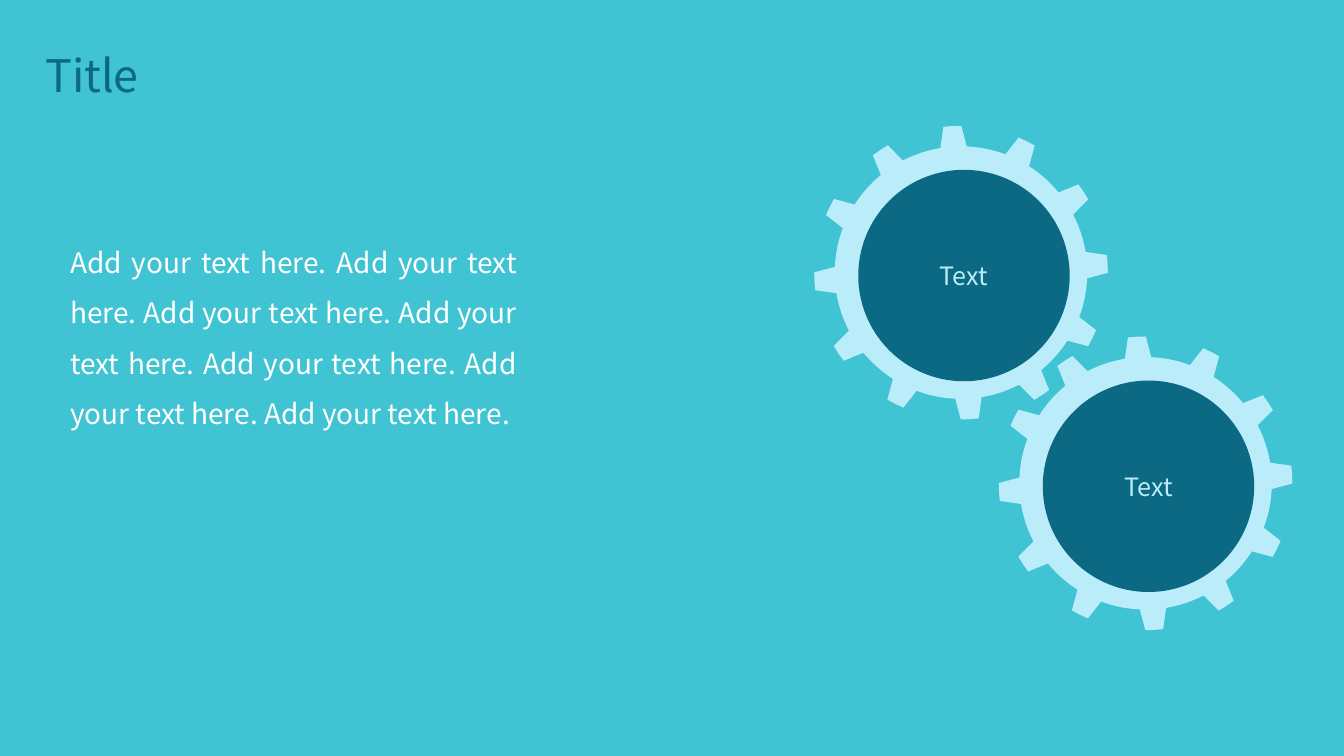
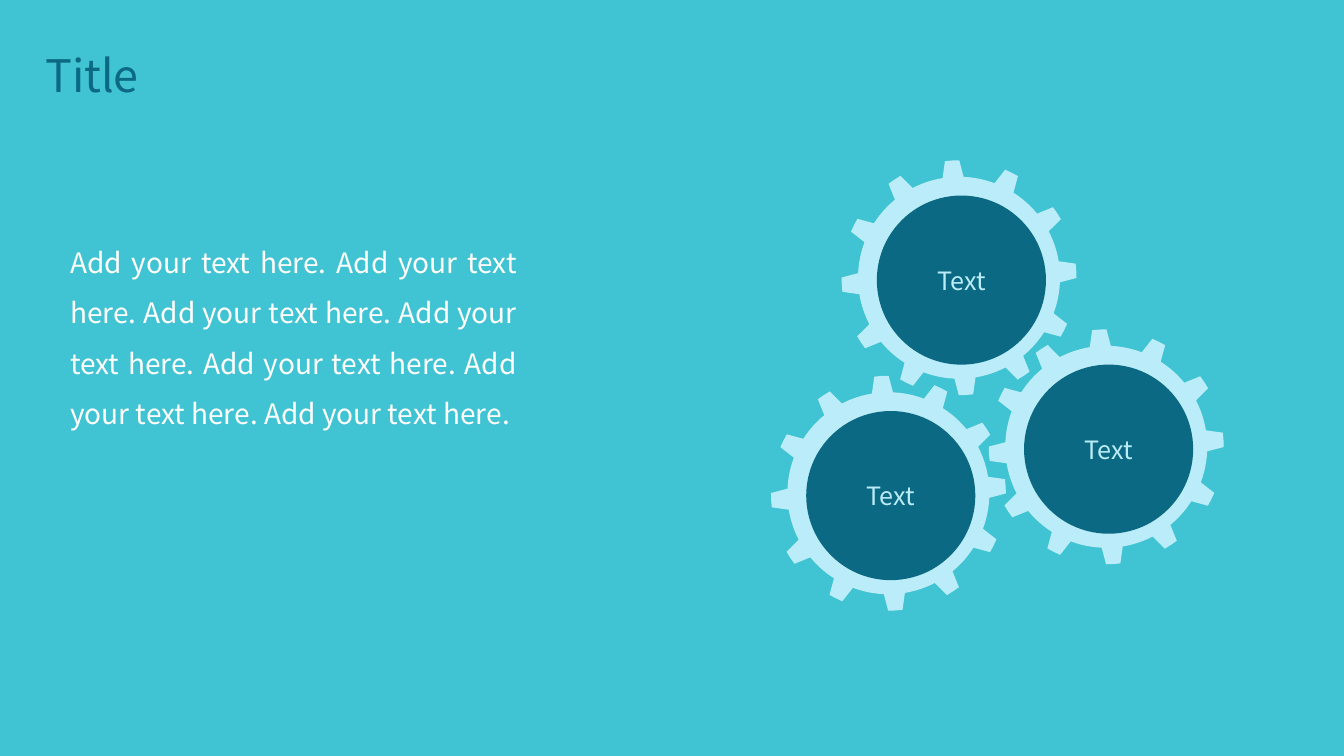
from math import cos, radians, sin

from pptx import Presentation
from pptx.dml.color import RGBColor
from pptx.enum.shapes import MSO_SHAPE
from pptx.enum.text import MSO_ANCHOR, PP_ALIGN
from pptx.util import Cm, Pt

SKY = RGBColor(0x40, 0xC3, 0xD3)
DEEP = RGBColor(0x0B, 0x69, 0x83)
ICE = RGBColor(0xBB, 0xEC, 0xF9)
WHITE = RGBColor(0xFF, 0xFF, 0xFF)
FONT = "Noto Sans CJK JP"

OVAL = MSO_SHAPE.OVAL
TOP, MIDDLE = MSO_ANCHOR.TOP, MSO_ANCHOR.MIDDLE
LEFT, CENTER, JUSTIFY = PP_ALIGN.LEFT, PP_ALIGN.CENTER, PP_ALIGN.JUSTIFY

TEETH = 12
FIRST_TOOTH = -3.4  # degrees clockwise from the top
TIP_HALF, ROOT_HALF = 3.5, 6  # half width of a tooth in degrees
ARC_STEPS = 6
# Proportions of the gear's outer radius
ROOT_RATIO, DISC_RATIO, DISC_SHIFT = 0.86, 0.72, 0.02

BODY = " ".join(["Add your text here."] * 7)

# Each slide: outer radius, then centre and label of each gear, in cm
GEAR_SLIDES = [
    (3.7, [(24.22, 6.87, "Text"), (28.87, 12.18, "Text")]),
    (2.96, [(24.17, 7, "Text"), (22.39, 12.43, "Text"), (27.88, 11.26, "Text")]),
]


def gear_outline(x, y, radius):
    """Return the corner points of a gear, clockwise, in EMU."""
    def point(angle, distance):
        turn = radians(angle)
        return Cm(x + distance * sin(turn)), Cm(y - distance * cos(turn))

    pitch = 360 / TEETH
    root = radius * ROOT_RATIO
    arc_step = (pitch - 2 * ROOT_HALF) / ARC_STEPS
    points = []
    for tooth in range(TEETH):
        middle = FIRST_TOOTH + tooth * pitch
        points += [point(middle + side, radius) for side in (-TIP_HALF, 0, TIP_HALF)]
        points += [point(middle + ROOT_HALF + step * arc_step, root)
                   for step in range(ARC_STEPS + 1)]
    return points


class GearDeck:
    """The deck's style and the slide being filled."""

    def __init__(self):
        self.prs = Presentation()
        self.prs.slide_width, self.prs.slide_height = Cm(33.87), Cm(19.05)
        background = self.prs.slide_master.background.fill
        background.solid()
        background.fore_color.rgb = SKY
        self.slide = None

    def new_slide(self):
        self.slide = self.prs.slides.add_slide(self.prs.slide_layouts[6])

    def paint(self, shape, color):
        shape.shadow.inherit = False
        shape.fill.solid()
        shape.fill.fore_color.rgb = color
        shape.line.fill.background()

    def set_text(self, shape, text, size, color, align=LEFT, anchor=MIDDLE, spacing=1.0):
        frame = shape.text_frame
        frame.word_wrap = True
        frame.vertical_anchor = anchor
        paragraph = frame.paragraphs[0]
        paragraph.text = text
        paragraph.alignment = align
        paragraph.line_spacing = spacing
        paragraph.font.name = FONT
        paragraph.font.size = Pt(size)
        paragraph.font.color.rgb = color

    def title(self, text):
        box = self.slide.shapes.add_textbox(Cm(0.89), Cm(0.46), Cm(18.52), Cm(3))
        self.set_text(box, text, 32, DEEP, spacing=0.9)

    def body(self, text):
        box = self.slide.shapes.add_textbox(Cm(1.52), Cm(5.64), Cm(11.76), Cm(7.8))
        self.set_text(box, text, 20, WHITE, JUSTIFY, TOP, 1.5)

    def gear(self, x, y, radius, label):
        parts = self.slide.shapes.add_group_shape().shapes
        start, *others = gear_outline(x, y, radius)
        outline = parts.build_freeform(*start)
        outline.add_line_segments(others, close=True)
        self.paint(outline.convert_to_shape(), ICE)

        disc_radius = radius * DISC_RATIO
        inset = radius * DISC_SHIFT - disc_radius
        size = Cm(2 * disc_radius)
        disc = parts.add_shape(OVAL, Cm(x + inset), Cm(y + inset), size, size)
        self.paint(disc, DEEP)
        self.set_text(disc, label, 18, ICE, CENTER)


def main():
    deck = GearDeck()
    for radius, gears in GEAR_SLIDES:
        deck.new_slide()
        for x, y, label in gears:
            deck.gear(x, y, radius, label)
        deck.body(BODY)
        deck.title("Title")
    deck.prs.save("out.pptx")


if __name__ == "__main__":
    main()
